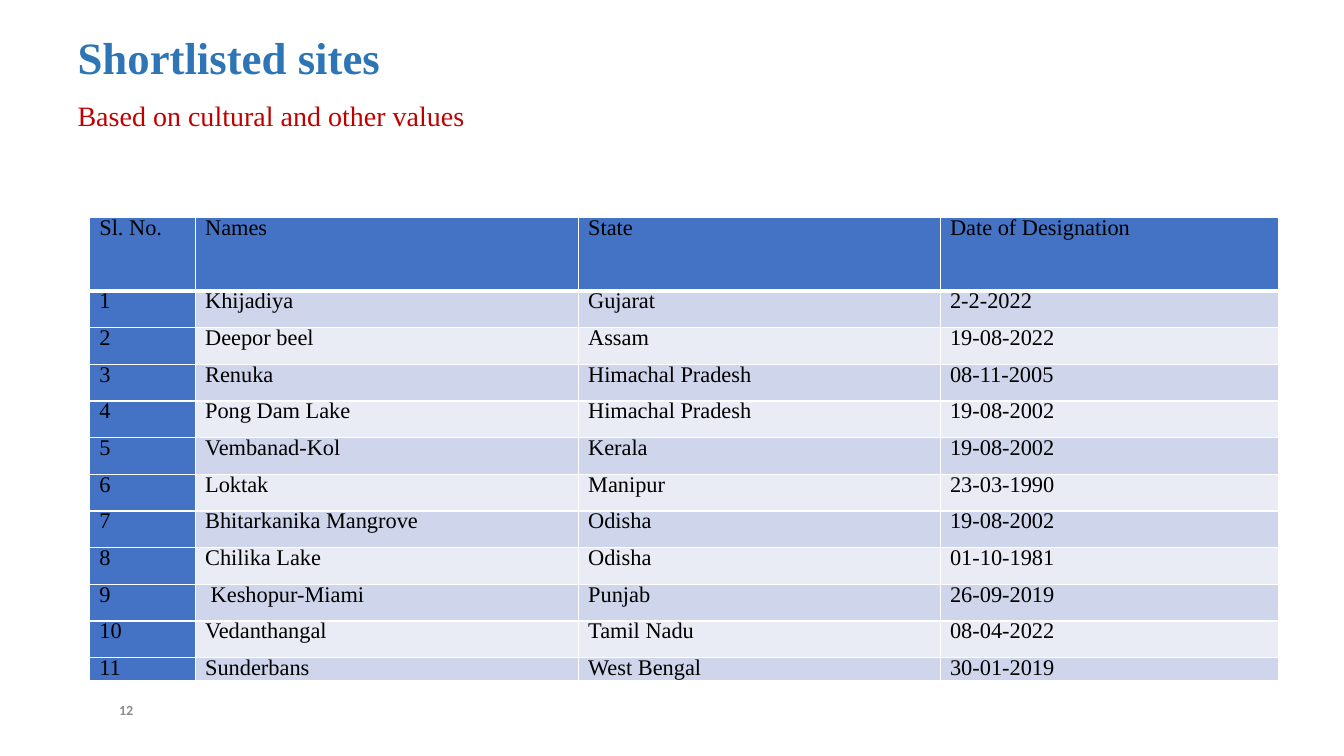
from lxml import etree
from pptx import Presentation
from pptx import util as u
from pptx.dml.color import RGBColor
from pptx.enum import text
from pptx.oxml import ns

Pt = u.Pt
SERIF = "Times New Roman"
BLACK = RGBColor(0x00, 0x00, 0x00)
WHITE = RGBColor(0xFF, 0xFF, 0xFF)
TITLE_BLUE = RGBColor(0x2E, 0x75, 0xB6)
SUBTITLE_RED = RGBColor(0xC0, 0x00, 0x00)
NUMBER_GREY = RGBColor(0x8C, 0x8C, 0x8C)
HEADER_BLUE = RGBColor(0x44, 0x72, 0xC4)
BANDS = [RGBColor(0xE9, 0xEB, 0xF5), RGBColor(0xCF, 0xD5, 0xEA)]

SITES = [
    ("Sl. No.", "Names", "State", "Date of Designation"),
    ("1", "Khijadiya", "Gujarat", "2-2-2022"),
    ("2", "Deepor beel", "Assam", "19-08-2022"),
    ("3", "Renuka", "Himachal Pradesh", "08-11-2005"),
    ("4", "Pong Dam Lake", "Himachal Pradesh", "19-08-2002"),
    ("5", "Vembanad-Kol", "Kerala", "19-08-2002"),
    ("6", "Loktak", "Manipur", "23-03-1990"),
    ("7", "Bhitarkanika Mangrove", "Odisha", "19-08-2002"),
    ("8", "Chilika Lake", "Odisha", "01-10-1981"),
    ("9", " Keshopur-Miami", "Punjab", "26-09-2019"),
    ("10", "Vedanthangal", "Tamil Nadu", "08-04-2022"),
    ("11", "Sunderbans", "West Bengal", "30-01-2019"),
]
COLUMN_WIDTHS = [75.6, 273.6, 258.5, 241.2]
ROW_HEIGHTS = [52.3] + [26.2] * 10 + [15.7]


def write(frame, words, size, color, font=SERIF, bold=False,
          align=text.PP_ALIGN.LEFT, spacing=0.9, before=0):
    paragraph = frame.paragraphs[0]
    paragraph.alignment = align
    paragraph.line_spacing = spacing
    paragraph.space_before = Pt(before)
    run = paragraph.add_run()
    run.text = words
    run.font.name = font
    run.font.size = Pt(size)
    run.font.bold = bold
    run.font.color.rgb = color
    return paragraph


def add_border(cell, side, width):
    line = etree.SubElement(cell._tc.get_or_add_tcPr(), ns.qn(f"a:ln{side}"),
                            w=str(Pt(width)))
    fill = etree.SubElement(line, ns.qn("a:solidFill"))
    etree.SubElement(fill, ns.qn("a:srgbClr"), val=str(WHITE))


deck = Presentation()
deck.slide_width, deck.slide_height = Pt(960), Pt(540)
slide = deck.slides.add_slide(deck.slide_layouts[1])

# Title and subtitle
title, subtitle = slide.placeholders
title.left, title.top, title.width, title.height = Pt(48.2), Pt(21.6), Pt(864), Pt(41.8)
subtitle.left, subtitle.top, subtitle.width, subtitle.height = Pt(48.2), Pt(64.8), Pt(864.7), Pt(33.8)
for heading, anchor in ((title, text.MSO_ANCHOR.MIDDLE), (subtitle, text.MSO_ANCHOR.BOTTOM)):
    heading.text_frame.auto_size = text.MSO_AUTO_SIZE.NONE
    heading.text_frame.vertical_anchor = anchor
write(title.text_frame, "Shortlisted sites", 32, TITLE_BLUE, bold=True)
tagline = write(subtitle.text_frame, "Based on cultural and other values", 20,
                SUBTITLE_RED, before=10)
tagline_format = tagline._p.get_or_add_pPr()
tagline_format.set("marL", "0")
tagline_format.set("indent", "0")
etree.SubElement(tagline_format, ns.qn("a:buNone"))

# Table of sites
sites = slide.shapes.add_table(len(SITES), len(COLUMN_WIDTHS), Pt(64.2), Pt(155.6),
                               Pt(sum(COLUMN_WIDTHS)), Pt(sum(ROW_HEIGHTS))).table
for column, width in zip(sites.columns, COLUMN_WIDTHS):
    column.width = Pt(width)
for row, height in zip(sites.rows, ROW_HEIGHTS):
    row.height = Pt(height)
for r, site in enumerate(SITES):
    for c, words in enumerate(site):
        cell = sites.cell(r, c)
        cell.margin_left = cell.margin_right = Pt(6.8)
        cell.margin_top = cell.margin_bottom = 0
        write(cell.text_frame, words, 16, BLACK, before=7.5)
        for side in "LRTB":
            add_border(cell, side, 3 if r == 0 and side == "B" else 1)
        cell.fill.solid()
        cell.fill.fore_color.rgb = HEADER_BLUE if r == 0 or c == 0 else BANDS[r % 2]

# Slide number
number = slide.shapes.add_textbox(Pt(49), Pt(496.1), Pt(53.3), Pt(21.6)).text_frame
number.word_wrap = True
number.vertical_anchor = text.MSO_ANCHOR.MIDDLE
write(number, "12", 10, NUMBER_GREY, font="Calibri", bold=True,
      align=text.PP_ALIGN.RIGHT, spacing=1.0)

deck.save("out.pptx")
